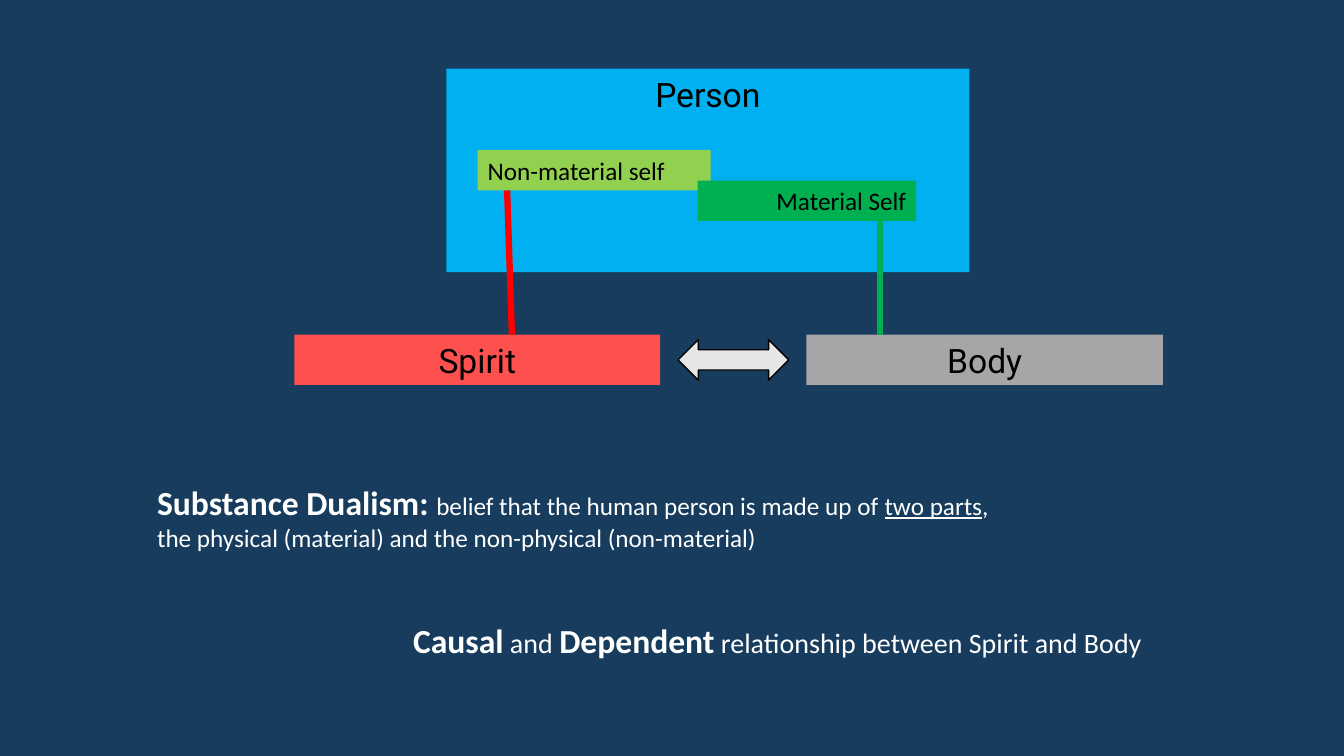
from pptx import Presentation
from pptx.dml.color import RGBColor
from pptx.enum.shapes import MSO_CONNECTOR, MSO_SHAPE
from pptx.enum.text import MSO_ANCHOR, PP_ALIGN
from pptx.oxml.ns import qn
from pptx.util import Cm, Pt
from lxml import etree

NAVY = RGBColor(0x17, 0x3C, 0x5D)
SKY = RGBColor(0x00, 0xB0, 0xF0)
LIME = RGBColor(0x92, 0xD0, 0x50)
GREEN = RGBColor(0x00, 0xB0, 0x50)
CORAL = RGBColor(0xFF, 0x50, 0x50)
GRAY = RGBColor(0xA6, 0xA6, 0xA6)
RED = RGBColor(0xFF, 0x00, 0x00)
SILVER = RGBColor(0xE7, 0xE6, 0xE6)
BLACK = RGBColor(0x00, 0x00, 0x00)
WHITE = RGBColor(0xFF, 0xFF, 0xFF)

RECTANGLE = MSO_SHAPE.RECTANGLE
DOUBLE_ARROW = MSO_SHAPE.LEFT_RIGHT_ARROW
STRAIGHT = MSO_CONNECTOR.STRAIGHT
LEFT, CENTER, RIGHT = PP_ALIGN.LEFT, PP_ALIGN.CENTER, PP_ALIGN.RIGHT
TOP = MSO_ANCHOR.TOP


def add_text(paragraph, text, size=18, font="Calibri", color=WHITE, bold=False, underline=False):
    """Append a formatted run to a paragraph."""
    run = paragraph.add_run()
    run.text = text
    run.font.size = Pt(size)
    run.font.name = font
    run.font.color.rgb = color
    run.font.bold = bold
    run.font.underline = underline


def add_block(slide, kind, left, top, width, height, fill):
    """Add a flat filled shape without an outline."""
    block = slide.shapes.add_shape(kind, Cm(left), Cm(top), Cm(width), Cm(height))
    block.shadow.inherit = False
    block.fill.solid()
    block.fill.fore_color.rgb = fill
    block.line.fill.background()
    return block


def add_label(slide, text, left, top, width, height, fill, align=CENTER, **text_format):
    """Add a coloured rectangle with black text at its top."""
    label = add_block(slide, RECTANGLE, left, top, width, height, fill)
    frame = label.text_frame
    frame.word_wrap = True
    frame.vertical_anchor = TOP
    frame.paragraphs[0].alignment = align
    add_text(frame.paragraphs[0], text, color=BLACK, **text_format)


def add_link(slide, start, end, color):
    """Join two points with a thick line."""
    link = slide.shapes.add_connector(STRAIGHT, *(Cm(value) for value in start + end))
    link.line.color.rgb = color
    link.line.width = Pt(4.5)
    etree.SubElement(link._element.spPr, qn("a:effectLst"))


def add_diagram(slide, left, top):
    """Draw the person above the interacting spirit and body."""
    heading = {"size": 24, "font": "Roboto"}
    base = top + 6.7
    add_label(slide, "Person", left + 3.83, top, 13.18, 5.13, SKY, **heading)
    add_label(slide, "Non-material self", left + 4.62, top + 2.05, 5.87, 1.02, LIME, LEFT)
    add_label(slide, "Material Self", left + 10.16, top + 2.82, 5.51, 1.02, GREEN, RIGHT)
    add_label(slide, "Spirit", left, base, 9.22, 1.27, CORAL, **heading)
    add_label(slide, "Body", left + 12.9, base, 8.99, 1.27, GRAY, **heading)
    add_link(slide, (left + 5.36, top + 3.07), (left + 5.48, base), RED)
    add_link(slide, (left + 14.75, top + 3.84), (left + 14.75, base), GREEN)
    interaction = add_block(slide, DOUBLE_ARROW, left + 9.67, base + 0.13, 2.79, 1.02, SILVER)
    interaction.line.color.rgb = BLACK
    interaction.line.width = Pt(1)


def add_statement(slide, left, top, width, height, lines):
    """Place lines of formatted runs in a text box."""
    box = slide.shapes.add_textbox(Cm(left), Cm(top), Cm(width), Cm(height))
    frame = box.text_frame
    frame.word_wrap = True
    for index, line in enumerate(lines):
        paragraph = frame.add_paragraph() if index else frame.paragraphs[0]
        for text, text_format in line:
            add_text(paragraph, text, **text_format)


def main():
    """Build and save the slide on substance dualism."""
    presentation = Presentation()
    presentation.slide_width = Cm(33.87)
    presentation.slide_height = Cm(19.05)
    slide = presentation.slides.add_slide(presentation.slide_layouts[6])
    slide.background.fill.solid()
    slide.background.fill.fore_color.rgb = NAVY

    strong = {"size": 24, "bold": True}
    medium = {"size": 20}
    add_diagram(slide, 7.42, 1.73)
    add_statement(slide, 3.71, 12.01, 22.5, 2.06, [
        [("Substance Dualism: ", strong),
         ("belief that the human person is made up of ", {}),
         ("two parts", {"underline": True}),
         (",", {})],
        [("the physical (material) and the non-physical (non-material)", {})],
    ])
    add_statement(slide, 10.16, 15.49, 20.32, 1.27, [
        [("Causal", strong),
         (" and ", medium),
         ("Dependent", strong),
         (" relationship between Spirit and Body", medium)],
    ])
    presentation.save("out.pptx")


if __name__ == "__main__":
    main()
